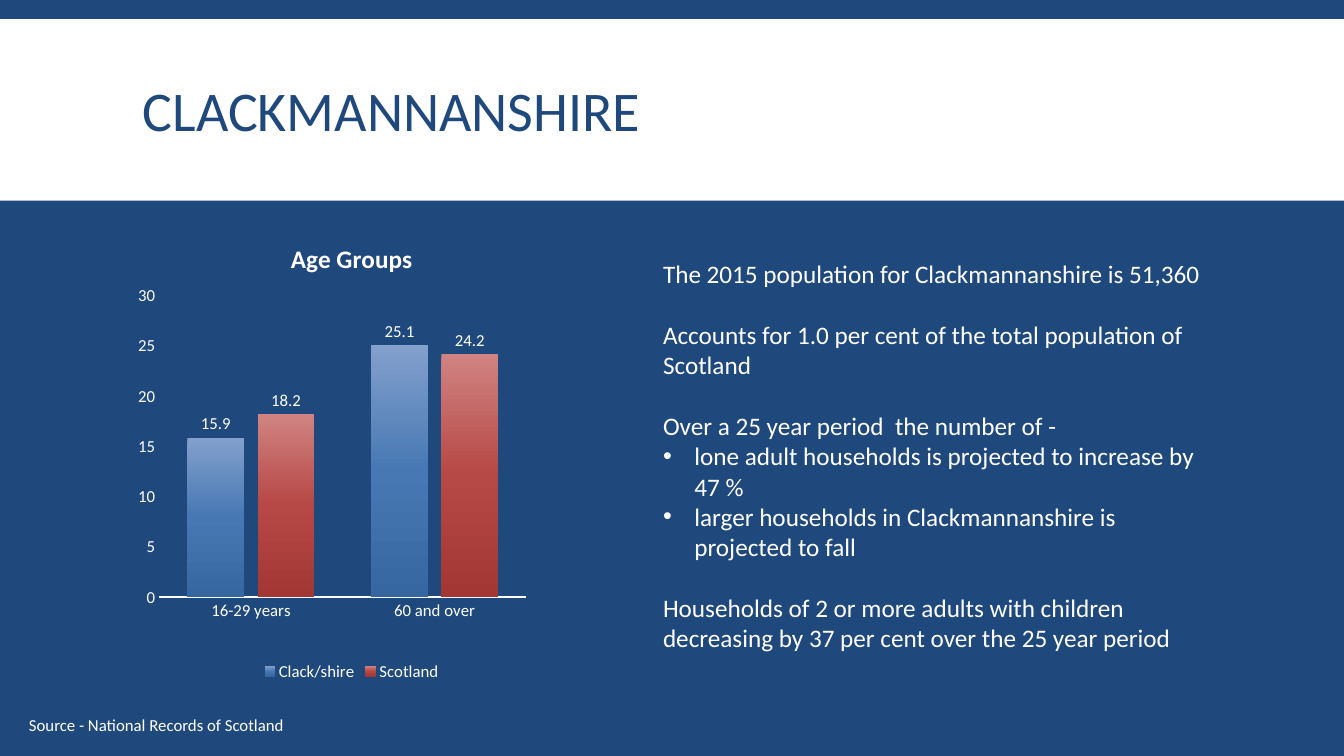
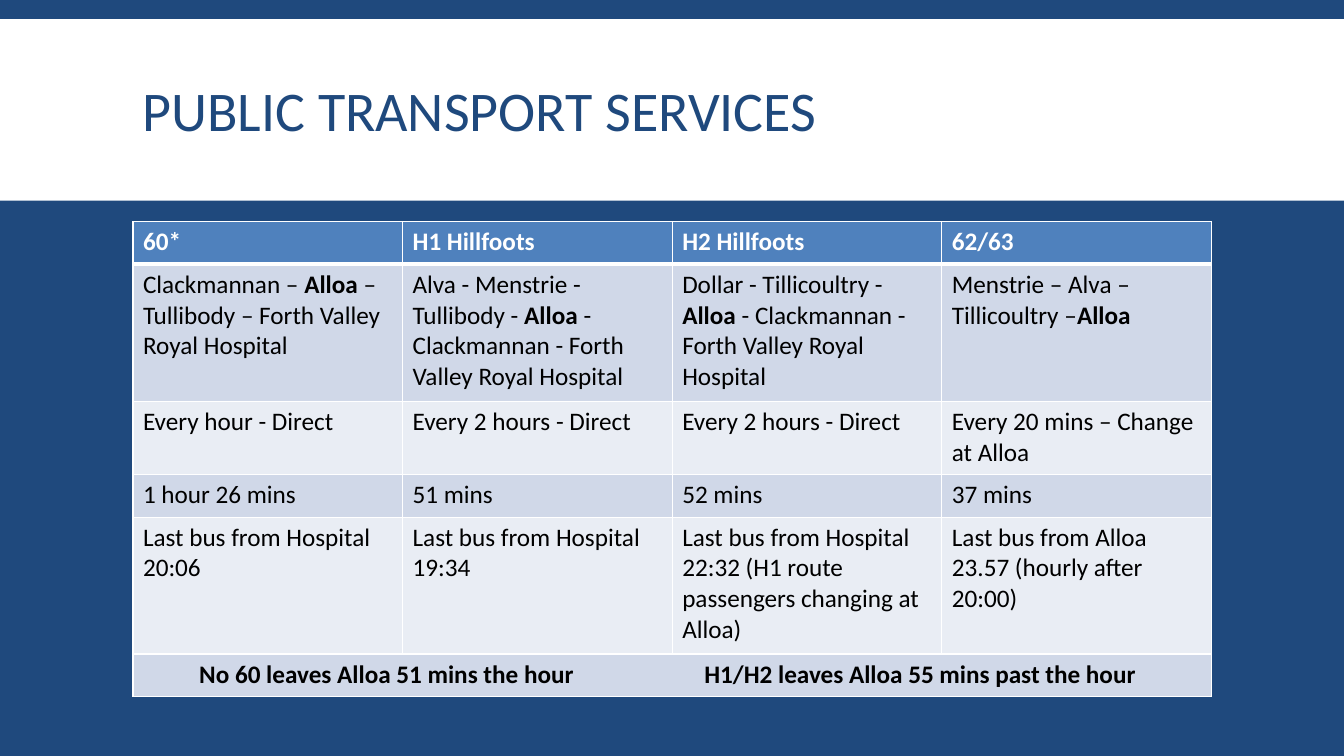
from copy import deepcopy

from lxml.etree import SubElement
from pptx import Presentation
from pptx.chart.data import CategoryChartData
from pptx.dml.color import RGBColor
from pptx.enum.chart import XL_CHART_TYPE as ChartType
from pptx.enum.chart import XL_LABEL_POSITION as LabelPosition
from pptx.enum.chart import XL_LEGEND_POSITION as LegendPosition
from pptx.enum.chart import XL_TICK_MARK as TickMark
from pptx.enum.shapes import MSO_SHAPE as Shape
from pptx.enum.text import MSO_ANCHOR as Anchor
from pptx.oxml import parse_xml
from pptx.oxml.ns import nsdecls, qn
from pptx.util import Cm, Pt

NAVY = RGBColor(0x1F, 0x49, 0x7D)
WHITE = RGBColor(0xFF, 0xFF, 0xFF)
BLACK = RGBColor(0x00, 0x00, 0x00)
HEADER_BLUE = RGBColor(0x4F, 0x81, 0xBD)
ROW_FILLS = [RGBColor(0xE9, 0xED, 0xF4), RGBColor(0xD0, 0xD8, 0xE8)]
FONT = "Calibri"

SLIDE_WIDTH, SLIDE_HEIGHT = 33.87, 19.05
CONTENT_LEFT, CONTENT_TOP, CONTENT_WIDTH = 3.35, 5.59, 27.18
PARAGRAPH_GAP = 22

POPULATION_TITLE = "CLACKMANNANSHIRE"
AGE_TITLE = "Age Groups"
AGE_GROUPS = ["16-29 years", "60 and over"]
# name, values, gradient from top to bottom
AGE_SERIES = [
    ("Clack/shire", (15.9, 25.1), ("83A0CD", "4778B3", "3667A0")),
    ("Scotland", (18.2, 24.2), ("D08382", "B64845", "A33734")),
]
# text, space before in points, bulleted
POPULATION_FACTS = [
    ("The 2015 population for Clackmannanshire is 51,360", 0, False),
    ("Accounts for 1.0 per cent of the total population of Scotland", PARAGRAPH_GAP, False),
    ("Over a 25 year period  the number of -", PARAGRAPH_GAP, False),
    ("lone adult households is projected to increase by 47 %", 0, True),
    ("larger households in Clackmannanshire is projected to fall", 0, True),
    ("Households of 2 or more adults with children decreasing by 37 per cent "
     "over the 25 year period", PARAGRAPH_GAP, False),
]
SOURCE = "Source - National Records of Scotland"

TRANSPORT_TITLE = "PUBLIC TRANSPORT SERVICES"
# ** switches bold on and off
BUS_ROWS = [
    ["**60*", "**H1 Hillfoots", "**H2 Hillfoots", "**62/63"],
    ["Clackmannan –** Alloa **– Tullibody – Forth Valley Royal Hospital",
     "Alva - Menstrie - Tullibody - **Alloa **- Clackmannan - Forth Valley Royal Hospital",
     "Dollar - Tillicoultry - **Alloa** - Clackmannan - Forth Valley Royal Hospital",
     "Menstrie – Alva – Tillicoultry –**Alloa"],
    ["Every hour - Direct", "Every 2 hours - Direct", "Every 2 hours - Direct",
     "Every 20 mins – Change at Alloa"],
    ["1 hour 26 mins", "51 mins", "52 mins", "37 mins"],
    ["Last bus from Hospital 20:06", "Last bus from Hospital 19:34",
     "Last bus from Hospital 22:32 (H1 route passengers changing at Alloa)",
     "Last bus from Alloa 23.57 (hourly after 20:00)"],
    ["**No 60 leaves Alloa 51 mins the hour\tH1/H2 leaves Alloa 55 mins past the hour"],
]
ROW_HEIGHTS = [1.07, 3.45, 1.85, 1.07, 3.45, 1.07]
DEPARTURES_INDENT, DEPARTURES_TAB = 1.67, 12.73


def set_font(font, size, colour, bold=False):
    font.name, font.size, font.bold = FONT, Pt(size), bold
    font.color.rgb = colour


def write_text(paragraph, text, size=18, colour=WHITE):
    """Fill a paragraph; each ** in the text switches bold."""
    for index, part in enumerate(text.split("**")):
        if part:
            run = paragraph.add_run()
            run.text = part
            set_font(run.font, size, colour, bold=index % 2 == 1)


def add_text_frame(slide, left, top, width, height, wrap=True):
    frame = slide.shapes.add_textbox(Cm(left), Cm(top), Cm(width), Cm(height)).text_frame
    frame.word_wrap = wrap
    return frame


def add_titled_slide(presentation, title):
    slide = presentation.slides.add_slide(presentation.slide_layouts[6])
    band = slide.shapes.add_shape(Shape.RECTANGLE, 0, Cm(0.48), Cm(SLIDE_WIDTH), Cm(4.58))
    band.shadow.inherit = False
    band.fill.solid()
    band.fill.fore_color.rgb = WHITE
    band.line.fill.background()
    frame = add_text_frame(slide, CONTENT_LEFT, 0.79, CONTENT_WIDTH, 4.19)
    frame.vertical_anchor = Anchor.MIDDLE
    frame.paragraphs[0].line_spacing = 0.85
    write_text(frame.paragraphs[0], title, size=40, colour=NAVY)
    return slide


def add_bullet(paragraph):
    properties = paragraph._p.get_or_add_pPr()
    properties.set("marL", str(Cm(0.79)))
    properties.set("indent", str(-Cm(0.79)))
    SubElement(properties, qn("a:buFont")).set("typeface", "Arial")
    SubElement(properties, qn("a:buChar")).set("char", "•")


def fill_gradient(series, colours):
    fill = series.format.fill
    fill.gradient()
    fill.gradient_angle = 270
    stop_list = next(series._element.iter(qn("a:gsLst")))
    stop_list.append(deepcopy(stop_list[0]))
    for index, (stop, colour) in enumerate(zip(fill.gradient_stops, colours)):
        stop.color.rgb = RGBColor.from_string(colour)
        stop.position = index / (len(colours) - 1)


def place_plot(chart, **fractions):
    """Fix the inner plot area, in fractions of the chart."""
    plot_area = chart._chartSpace.chart.plotArea
    for layout in plot_area.findall(qn("c:layout")):
        plot_area.remove(layout)
    settings = {"layoutTarget": "inner", "xMode": "edge", "yMode": "edge", **fractions}
    items = "".join(f'<c:{name} val="{value}"/>' for name, value in settings.items())
    plot_area.insert(0, parse_xml(
        f'<c:layout {nsdecls("c")}><c:manualLayout>{items}</c:manualLayout></c:layout>'))


def add_age_chart(slide):
    data = CategoryChartData(number_format="General")
    data.categories = AGE_GROUPS
    for name, values, _ in AGE_SERIES:
        data.add_series(name, values)
    chart = slide.shapes.add_chart(ChartType.COLUMN_CLUSTERED, Cm(CONTENT_LEFT), Cm(CONTENT_TOP),
                                   Cm(11.02), Cm(11.68), data).chart
    set_font(chart.font, 12, WHITE)
    chart.has_title = True
    write_text(chart.chart_title.text_frame.paragraphs[0], f"**{AGE_TITLE}")
    chart.chart_title.include_in_layout = False
    chart.has_legend = True
    chart.legend.position = LegendPosition.BOTTOM
    chart.legend.include_in_layout = False
    set_font(chart.legend.font, 12, WHITE)
    for axis in (chart.category_axis, chart.value_axis):
        axis.major_tick_mark = axis.minor_tick_mark = TickMark.NONE
        axis.has_major_gridlines = False
        set_font(axis.tick_labels.font, 12, WHITE)
    chart.category_axis.format.line.color.rgb = WHITE
    chart.category_axis.format.line.width = Pt(1)
    value_axis = chart.value_axis
    value_axis.format.line.fill.background()
    value_axis.minimum_scale, value_axis.maximum_scale, value_axis.major_unit = 0, 30, 5
    plot = chart.plots[0]
    plot.gap_width, plot.overlap, plot.vary_by_categories = 100, -24, False
    for series, (_, _, colours) in zip(plot.series, AGE_SERIES):
        fill_gradient(series, colours)
        labels = series.data_labels
        labels.show_value = True
        labels.position = LabelPosition.OUTSIDE_END
        set_font(labels.font, 12, WHITE)
    place_plot(chart, x=0.06, y=0.16, w=0.84, h=0.65)


def add_population_slide(presentation):
    slide = add_titled_slide(presentation, POPULATION_TITLE)
    add_age_chart(slide)
    frame = add_text_frame(slide, 16.46, 6.38, 14.25, 11.02)
    for index, (text, gap, bulleted) in enumerate(POPULATION_FACTS):
        paragraph = frame.add_paragraph() if index else frame.paragraphs[0]
        paragraph.space_before = Pt(gap)
        if bulleted:
            add_bullet(paragraph)
        write_text(paragraph, text)
    source_frame = add_text_frame(slide, 0.48, 17.88, 7.24, 0.76, wrap=False)
    write_text(source_frame.paragraphs[0], SOURCE, size=12)


def style_cell(cell, fill, top=1, bottom=1):
    """Give a cell its fill and white borders, widths in points."""
    properties = cell._tc.get_or_add_tcPr()
    for side, width in (("L", 1), ("R", 1), ("T", top), ("B", bottom)):
        line = SubElement(properties, qn(f"a:ln{side}"), w=str(Pt(width)))
        colour = SubElement(SubElement(line, qn("a:solidFill")), qn("a:srgbClr"))
        colour.set("val", str(WHITE))
    cell.fill.solid()
    cell.fill.fore_color.rgb = fill


def add_transport_slide(presentation):
    slide = add_titled_slide(presentation, TRANSPORT_TITLE)
    column_count = len(BUS_ROWS[0])
    table = slide.shapes.add_table(len(BUS_ROWS), column_count, Cm(CONTENT_LEFT), Cm(CONTENT_TOP),
                                   Cm(CONTENT_WIDTH), Cm(sum(ROW_HEIGHTS))).table
    table.horz_banding = False
    for row_index, (texts, height) in enumerate(zip(BUS_ROWS, ROW_HEIGHTS)):
        table.rows[row_index].height = Cm(height)
        is_header = row_index == 0
        fill = HEADER_BLUE if is_header else ROW_FILLS[row_index % 2]
        for column_index in range(column_count):
            style_cell(table.cell(row_index, column_index), fill,
                       top=3 if row_index == 1 else 1, bottom=3 if is_header else 1)
        for column_index, text in enumerate(texts):
            paragraph = table.cell(row_index, column_index).text_frame.paragraphs[0]
            write_text(paragraph, text, colour=WHITE if is_header else BLACK)

    last_row = len(BUS_ROWS) - 1
    departures = table.cell(last_row, 0)
    departures.merge(table.cell(last_row, column_count - 1))
    departures.margin_left = Cm(DEPARTURES_INDENT)
    properties = departures.text_frame.paragraphs[0]._p.get_or_add_pPr()
    tab_list = SubElement(properties, qn("a:tabLst"))
    SubElement(tab_list, qn("a:tab"), pos=str(Cm(DEPARTURES_TAB)), algn="l")


def main():
    presentation = Presentation()
    presentation.slide_width, presentation.slide_height = Cm(SLIDE_WIDTH), Cm(SLIDE_HEIGHT)
    background = presentation.slide_master.background.fill
    background.solid()
    background.fore_color.rgb = NAVY
    add_population_slide(presentation)
    add_transport_slide(presentation)
    presentation.save("out.pptx")


if __name__ == "__main__":
    main()
